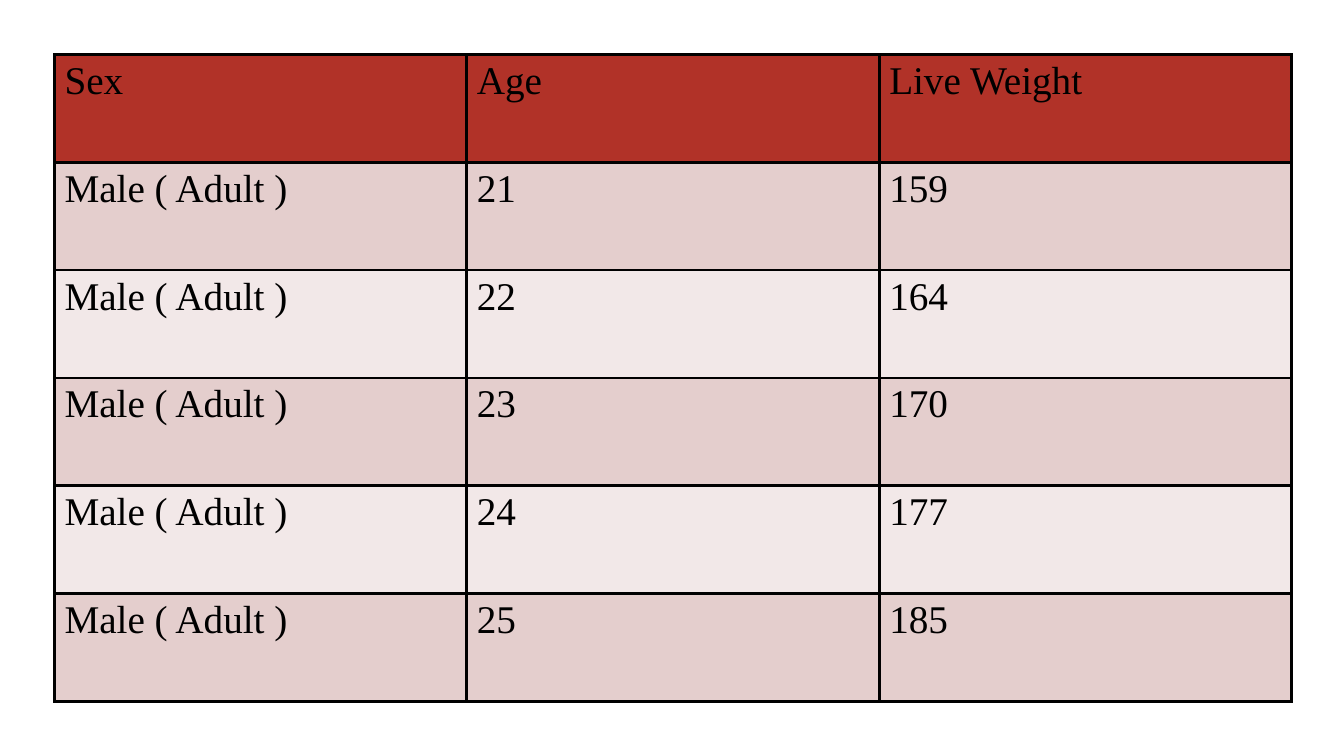
"""Build a slide with a table of live weight by sex and age."""
from lxml.etree import SubElement
from pptx import Presentation
from pptx.dml.color import RGBColor
from pptx.oxml.ns import qn
from pptx.util import Inches, Pt

THEME = {
    "header": "B13228",
    "bands": ("E4CECD", "F2E8E8"),
    "ink": "000000",
    "font": "Times New Roman",
    "size": Pt(28),
    "border": Pt(2.25),
}
TEXT_FORMAT = {"name": THEME["font"], "size": THEME["size"], "bold": False}

WEIGHT_BY_AGE = {21: 159, 22: 164, 23: 170, 24: 177, 25: 185}
records = [("Sex", "Age", "Live Weight")]
records += [("Male ( Adult )", str(age), str(weight)) for age, weight in WEIGHT_BY_AGE.items()]


def add_borders(cell):
    properties = cell._tc.get_or_add_tcPr()
    for side in ("lnL", "lnR", "lnT", "lnB"):
        line = SubElement(properties, qn(f"a:{side}"), w=str(THEME["border"]))
        fill = SubElement(line, qn("a:solidFill"))
        SubElement(fill, qn("a:srgbClr"), val=THEME["ink"])


deck = Presentation()
deck.slide_width, deck.slide_height = Inches(13.33), Inches(7.5)
page = deck.slides.add_slide(deck.slide_layouts[6])

column_width, row_height = Inches(4.09), Inches(1.07)
row_count, column_count = len(records), len(records[0])
table = page.shapes.add_table(
    row_count, column_count, Inches(0.54), Inches(0.54),
    column_width * column_count, row_height * row_count,
).table

for row_index, record in enumerate(records):
    color = THEME["bands"][(row_index - 1) % 2] if row_index else THEME["header"]
    for column_index, text in enumerate(record):
        cell = table.cell(row_index, column_index)
        add_borders(cell)
        cell.fill.solid()
        cell.fill.fore_color.rgb = RGBColor.from_string(color)
        span = cell.text_frame.paragraphs[0].add_run()
        span.text = text
        for name, value in TEXT_FORMAT.items():
            setattr(span.font, name, value)
        span.font.color.rgb = RGBColor.from_string(THEME["ink"])

deck.save("out.pptx")
